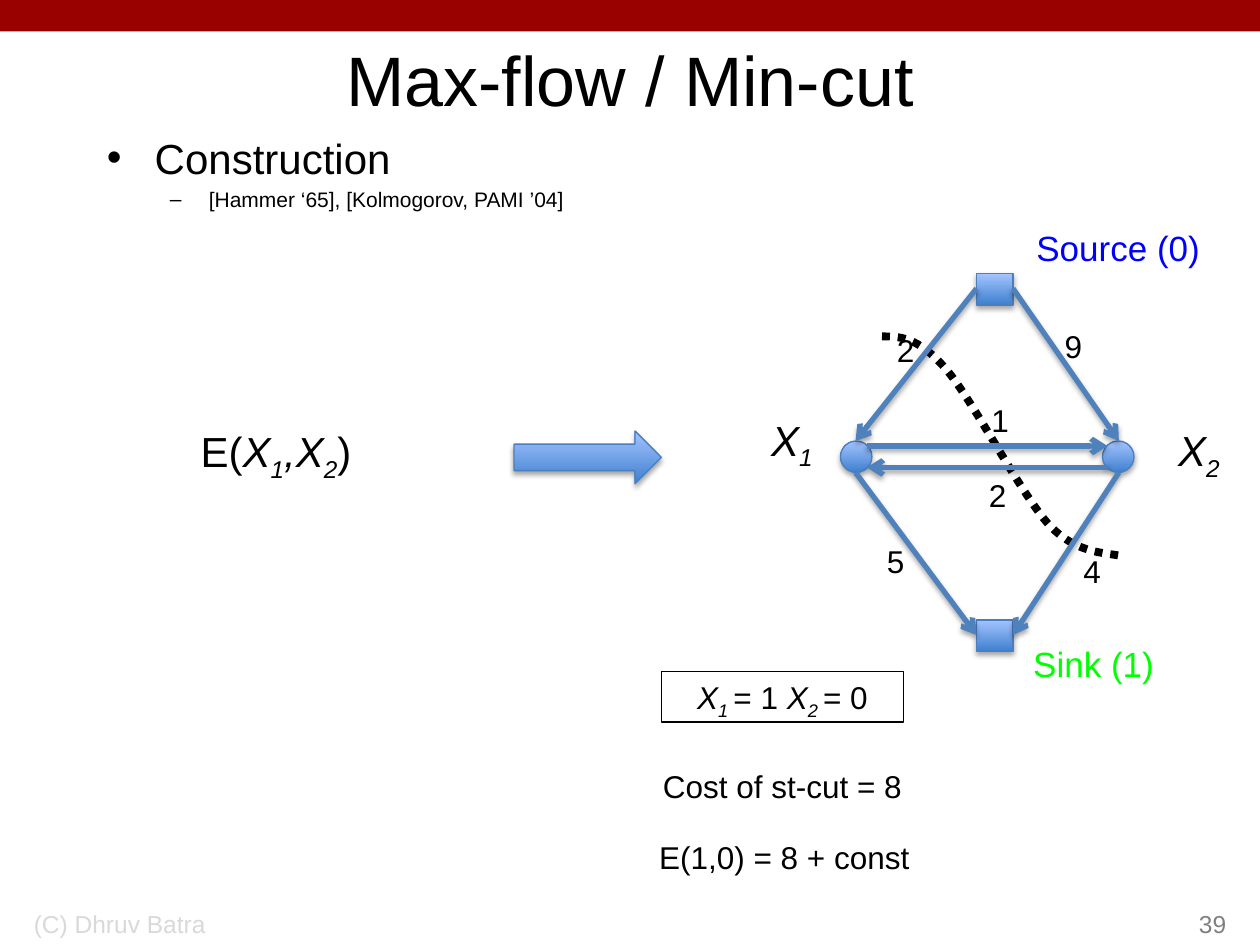
from dataclasses import dataclass

from lxml import etree
from pptx import Presentation
from pptx.dml.color import RGBColor
from pptx.enum import dml, shapes, text
from pptx.oxml import ns
from pptx.util import Inches, Pt


@dataclass(frozen=True)
class Theme:
    """Colours and type sizes of the slide."""
    font: str = "Arial"
    banner: str = "990000"
    ink: str = "000000"
    source: str = "0000FF"
    sink: str = "00FF00"
    credit: str = "D9D9D9"
    number: str = "808080"
    edge: str = "4F81BD"
    outline: str = "4B7EBC"
    gradient: tuple = ("3F80CE", "A4C4FF")
    title_size: int = 40
    body_size: int = 24
    terminal_size: int = 20
    label_size: int = 18
    footer_size: int = 14
    citation_size: int = 12


THEME = Theme()
LEFT, CENTER, RIGHT = text.PP_ALIGN.LEFT, text.PP_ALIGN.CENTER, text.PP_ALIGN.RIGHT
TOP, MIDDLE, BOTTOM = text.MSO_ANCHOR.TOP, text.MSO_ANCHOR.MIDDLE, text.MSO_ANCHOR.BOTTOM


def rgb(value):
    """Turn a hex string into a colour."""
    return RGBColor.from_string(value)


def apply_format(target, values):
    """Set each named attribute on the target."""
    for name, value in values.items():
        setattr(target, name, value)


def add_child(parent, tag, **attributes):
    """Append a drawing element with the given attributes."""
    return etree.SubElement(parent, ns.qn(tag), {k: str(v) for k, v in attributes.items()})


def variable(index):
    """Return the runs of an italic X with a subscript."""
    return [("X", "i"), (index, "is")]


def fill_paragraph(paragraph, runs, size, color=THEME.ink):
    """Write runs, where style i is italic and s is subscript."""
    for words, style in runs:
        run = paragraph.add_run()
        run.text = words
        apply_format(run.font, {"name": THEME.font, "size": Pt(size), "italic": "i" in style})
        run.font.color.rgb = rgb(color)
        if "s" in style:
            run.font._element.set("baseline", "-25000")


def add_text(slide, box, runs, size, color=THEME.ink, align=CENTER, anchor=TOP, wrap=True):
    """Add a one-paragraph text box."""
    if isinstance(runs, str):
        runs = [(runs, "")]
    label = slide.shapes.add_textbox(*map(Inches, box))
    apply_format(label.text_frame, {"word_wrap": wrap, "vertical_anchor": anchor})
    paragraph = label.text_frame.paragraphs[0]
    paragraph.alignment = align
    fill_paragraph(paragraph, runs, size, color)
    return label


def add_outline(slide, box, items):
    """Add a bulleted list of (words, size, bullet, margin, indent, space) items."""
    frame = slide.shapes.add_textbox(*map(Inches, box)).text_frame
    frame.word_wrap = True
    for position, (words, size, bullet, margin, indent, space) in enumerate(items):
        paragraph = frame.add_paragraph() if position else frame.paragraphs[0]
        properties = paragraph._p.get_or_add_pPr()
        apply_format(properties, {"lvl": position})
        properties.set("marL", str(Inches(margin)))
        properties.set("indent", str(Inches(indent)))
        add_child(properties, "a:buFont", typeface=THEME.font)
        add_child(properties, "a:buChar", char=bullet)
        paragraph.space_before = Pt(space)
        fill_paragraph(paragraph, [(words, "")], size)


def add_shadow(shape):
    """Give a shape or connector a soft shadow below."""
    effects = add_child(shape._element.spPr, "a:effectLst")
    shadow = add_child(effects, "a:outerShdw", blurRad=Pt(3.1), dist=Pt(1.8),
                       dir=5400000, rotWithShape=0)
    add_child(add_child(shadow, "a:srgbClr", val=THEME.ink), "a:alpha", val=35000)


def add_banner(slide):
    """Add the coloured strip along the top."""
    banner = slide.shapes.add_shape(shapes.MSO_SHAPE.RECTANGLE, 0, 0, Inches(10), Inches(0.25))
    banner.shadow.inherit = False
    banner.fill.solid()
    banner.fill.fore_color.rgb = rgb(THEME.banner)
    banner.line.fill.background()


def add_glossy(slide, preset, box):
    """Add a gradient shape with an outline and shadow."""
    shape = slide.shapes.add_shape(preset, *map(Inches, box))
    shape.fill.gradient()
    shape.fill.gradient_angle = 90
    for stop, color in zip(shape.fill.gradient_stops, THEME.gradient):
        stop.color.rgb = rgb(color)
    shape.line.color.rgb = rgb(THEME.outline)
    shape.line.width = Pt(0.75)
    add_shadow(shape)


def add_edge(slide, start, end):
    """Add a directed graph edge."""
    edge = slide.shapes.add_connector(shapes.MSO_CONNECTOR.STRAIGHT, *map(Inches, start + end))
    edge.line.color.rgb = rgb(THEME.edge)
    edge.line.width = Pt(3)
    add_child(edge.line._get_or_add_ln(), "a:tailEnd", type="arrow")
    add_shadow(edge)


def add_cut(slide, points):
    """Add a dotted curve through Bezier control points."""
    start, *controls = [tuple(map(Inches, point)) for point in points]
    builder = slide.shapes.build_freeform(*start)
    builder.add_line_segments(controls, close=False)
    cut = builder.convert_to_shape()
    segments = cut._element.findall(".//" + ns.qn("a:lnTo"))
    for first in range(0, len(segments), 3):
        curve = etree.Element(ns.qn("a:cubicBezTo"))
        segments[first].addprevious(curve)
        for segment in segments[first:first + 3]:
            curve.append(segment[0])
            segment.getparent().remove(segment)
    cut.shadow.inherit = False
    cut.fill.background()
    cut.line.color.rgb = rgb(THEME.ink)
    apply_format(cut.line, {"width": Pt(4.5), "dash_style": dml.MSO_LINE.ROUND_DOT})


def add_graph(slide):
    """Add the flow network with its edge weights."""
    x1, x2, upper, lower = 6.79, 8.88, 3.5, 3.75
    left, right, source, sink = 7.75, 8.04, 2.29, 5.04
    add_cut(slide, [(7, 2.67), (7.14, 2.67), (7.28, 2.67), (7.5, 2.92), (7.72, 3.17),
                    (8.1, 3.92), (8.33, 4.17), (8.57, 4.42), (8.82, 4.38), (8.92, 4.42)])
    for weight, x, y in [("2", 7.02, 2.58), ("9", 8.35, 2.55), ("5", 6.94, 4.25),
                         ("4", 8.5, 4.33), ("2", 7.75, 3.73), ("1", 7.77, 3.13)]:
        add_text(slide, (x, y, 0.31, 0.37), weight, THEME.label_size, wrap=False)
    for index, x, y in [("1", 5.97, 3.24), ("2", 9.2, 3.32)]:
        add_text(slide, (x, y, 0.63, 0.5), variable(index), THEME.body_size)
    add_text(slide, (8.09, 1.75, 1.57, 0.43), "Source (0) ", THEME.terminal_size,
             THEME.source, wrap=False)
    add_text(slide, (8.1, 5.05, 1.16, 0.43), "Sink (1)", THEME.terminal_size,
             THEME.sink, wrap=False)
    for y in (source, sink):
        add_glossy(slide, shapes.MSO_SHAPE.RECTANGLE, (left, y - 0.12, 0.29, 0.25))
    for x in (6.67, 8.75):
        add_glossy(slide, shapes.MSO_SHAPE.OVAL, (x, upper, 0.25, 0.25))
    for start, end in [((left, source), (x1, upper)), ((right, source), (x2, upper)),
                       ((x1, lower), (left, sink)), ((x2, lower), (right, sink)),
                       ((6.88, 3.54), (8.79, 3.54)), ((8.79, 3.71), (6.88, 3.71))]:
        add_edge(slide, start, end)


def main():
    """Build and save the slide."""
    deck = Presentation()
    apply_format(deck, {"slide_width": Inches(10), "slide_height": Inches(7.5)})
    slide = deck.slides.add_slide(deck.slide_layouts[6])
    add_banner(slide)
    add_text(slide, (0.75, 0.25, 8.5, 0.75), "Max-flow / Min-cut", THEME.title_size, anchor=MIDDLE)
    add_outline(slide, (0.75, 1, 8.5, 6), [
        ("Construction", THEME.body_size, "•", 0.38, -0.38, 0),
        ("[Hammer ‘65], [Kolmogorov, PAMI ’04]", THEME.citation_size, "–", 0.81, -0.31, 2.4)])
    add_text(slide, (0.17, 7, 3.17, 0.5), "(C) Dhruv Batra", THEME.footer_size,
             THEME.credit, LEFT, BOTTOM)
    add_text(slide, (7.75, 7, 2.08, 0.5), "39", THEME.footer_size, THEME.number, RIGHT, BOTTOM)
    energy = [("E(", ""), *variable("1"), (",", "i"), *variable("2"), (") ", "")]
    add_text(slide, (1.47, 3.33, 1.44, 0.5), energy, THEME.body_size, wrap=False)
    add_glossy(slide, shapes.MSO_SHAPE.RIGHT_ARROW, (4.08, 3.42, 1.17, 0.42))
    labelling = [*variable("1 "), ("= 1 ", ""), *variable("2 "), ("= 0", "")]
    assignment = add_text(slide, (5.25, 5.33, 1.92, 0.4), labelling, THEME.label_size)
    assignment.line.color.rgb = rgb(THEME.ink)
    assignment.line.width = Pt(0.75)
    add_text(slide, (5.12, 6.6, 2.21, 0.4), "E(1,0) = 8 + const", THEME.label_size, wrap=False)
    add_text(slide, (4.75, 6.04, 2.92, 0.37), "Cost of st-cut = 8", THEME.label_size)
    add_graph(slide)
    deck.save("out.pptx")


if __name__ == "__main__":
    main()
